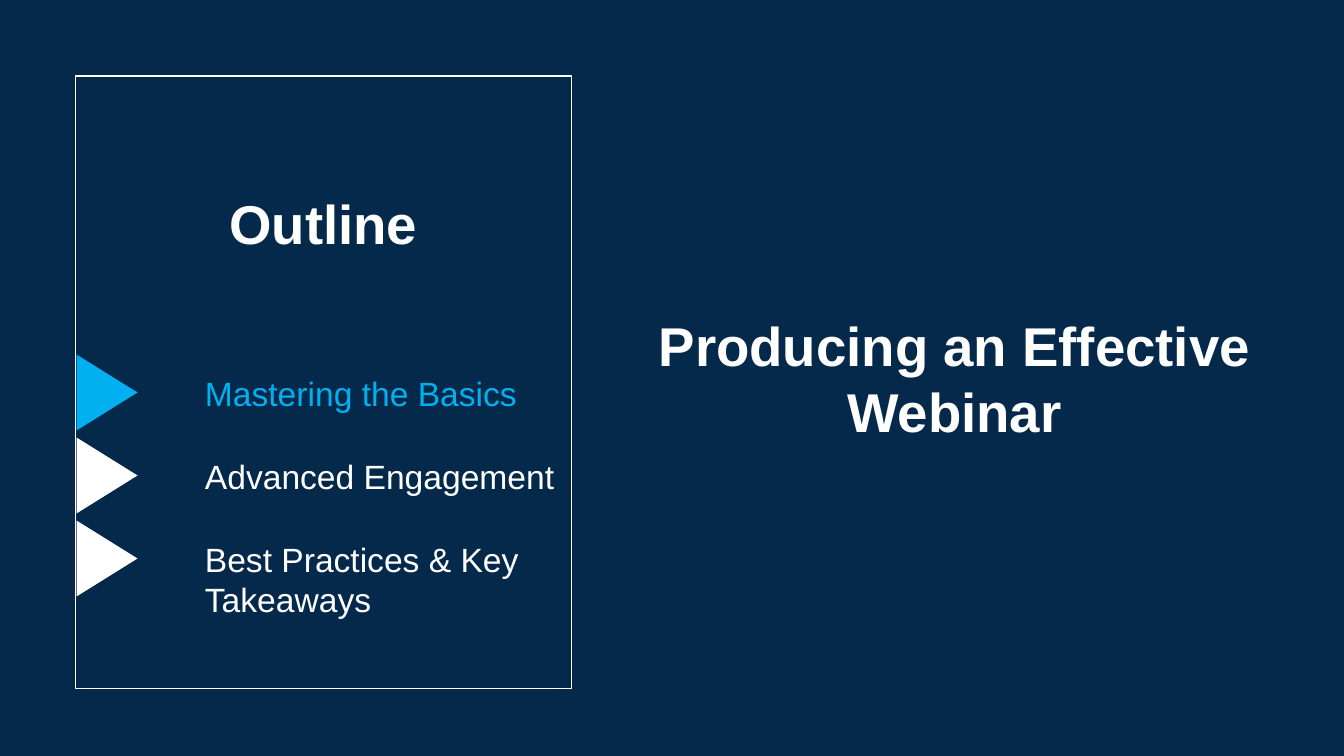
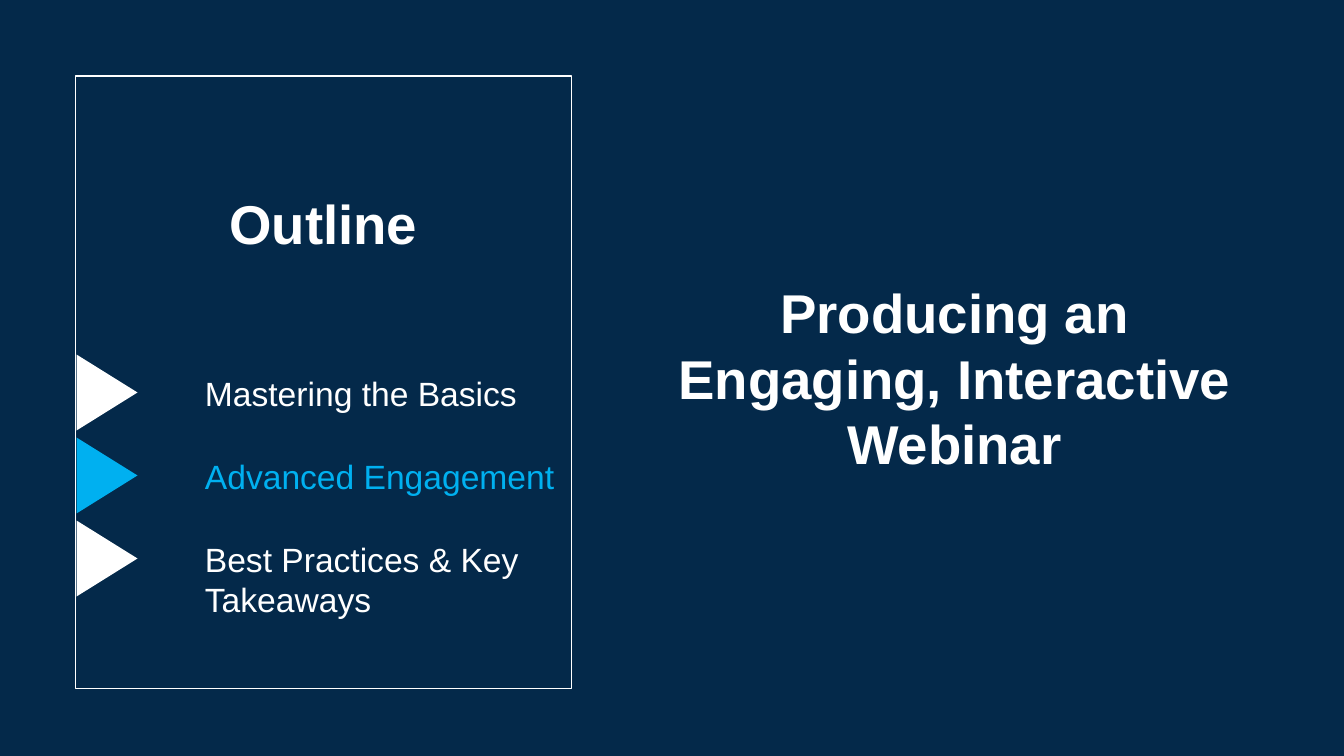
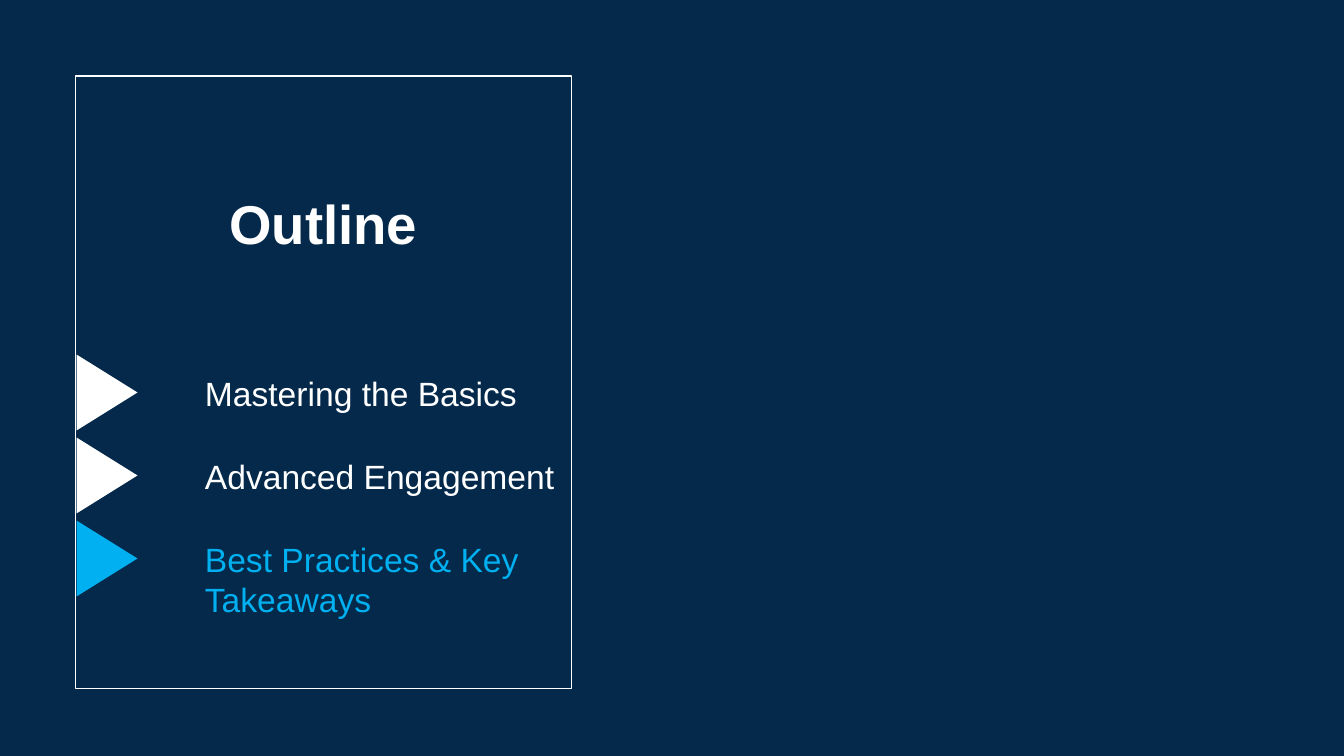
from dataclasses import dataclass

from pptx import Presentation
from pptx import util as u
from pptx.dml.color import RGBColor
from pptx.enum import shapes, text

EMU_PER_PX = 914400 / 100.8
COLORS = {"background": "04294A", "text": "FFFFFF", "accent": "00B0F0"}
FONT = "Arial"

# Outline entries sit on an even vertical rhythm
ENTRY_TOP, ENTRY_STEP = 362, 83
ENTRY_TEXT_DROP = 6


@dataclass(frozen=True)
class Box:
    left: int
    top: int
    width: int
    height: int

    def emu(self):
        return [px(v) for v in (self.left, self.top, self.width, self.height)]


@dataclass(frozen=True)
class Entry:
    label: str
    width: int
    height: int


@dataclass(frozen=True)
class Section:
    active: int
    heading: str = ""


FRAME = Box(76, 76, 496, 613)
OUTLINE_TITLE = Box(94, 76, 459, 293)
HEADING = Box(633, 231, 643, 293)

ENTRIES = [
    Entry("Mastering the Basics", 336, 50),
    Entry("Advanced Engagement", 373, 50),
    Entry("Best Practices & Key\nTakeaways", 337, 92),
]
SECTIONS = [
    Section(0, "Producing an Effective Webinar"),
    Section(1, "Producing an Engaging, Interactive Webinar"),
    Section(2),
]


def px(value: int) -> u.Emu:
    return u.Emu(round(value * EMU_PER_PX))


def rgb(name: str) -> RGBColor:
    return RGBColor.from_string(COLORS[name])


def write(paragraph, words: str, size: int, color: str, bold: bool = False) -> None:
    paragraph.text = words
    for run in paragraph.runs:
        run.font.name = FONT
        run.font.size = u.Pt(size)
        run.font.bold = bold
        run.font.color.rgb = rgb(color)


def add_title(parent, box: Box, words: str) -> None:
    frame = parent.add_textbox(*box.emu()).text_frame
    frame.word_wrap = True
    frame.vertical_anchor = text.MSO_ANCHOR.MIDDLE
    frame.margin_left = frame.margin_right = px(20)
    frame.margin_top = frame.margin_bottom = px(10)
    paragraph = frame.paragraphs[0]
    write(paragraph, words, 39, "text", bold=True)
    paragraph.alignment = text.PP_ALIGN.CENTER


def add_entry(parent, entry: Entry, top: int, color: str) -> None:
    # Marker pointing right from the frame's left edge
    marker = parent.add_shape(
        shapes.MSO_SHAPE.FLOWCHART_EXTRACT, *Box(69, top, 76, 61).emu())
    marker.rotation = 90
    marker.shadow.inherit = False
    marker.fill.solid()
    marker.fill.fore_color.rgb = rgb(color)
    marker.line.fill.background()

    # Label
    box = Box(195, top + ENTRY_TEXT_DROP, entry.width, entry.height)
    frame = parent.add_textbox(*box.emu()).text_frame
    frame.word_wrap = False
    frame.auto_size = text.MSO_AUTO_SIZE.SHAPE_TO_FIT_TEXT
    paragraph = frame.paragraphs[0]
    write(paragraph, entry.label, 24, color)
    paragraph.space_after = u.Pt(24)


def add_outline(slide, active: int) -> None:
    group = slide.shapes.add_group_shape().shapes
    add_title(group, OUTLINE_TITLE, "Outline")
    for index, entry in enumerate(ENTRIES):
        color = "accent" if index == active else "text"
        add_entry(group, entry, ENTRY_TOP + index * ENTRY_STEP, color)

    # Thin frame around the outline
    border = group.add_shape(shapes.MSO_SHAPE.RECTANGLE, *FRAME.emu())
    border.shadow.inherit = False
    border.fill.background()
    border.line.color.rgb = rgb("text")
    border.line.width = u.Pt(0.75)


def main() -> None:
    presentation = Presentation()
    presentation.slide_width, presentation.slide_height = px(1344), px(756)

    # Shared background
    background = presentation.slide_master.background.fill
    background.solid()
    background.fore_color.rgb = rgb("background")

    for section in SECTIONS:
        slide = presentation.slides.add_slide(presentation.slide_layouts[6])
        add_outline(slide, section.active)
        if section.heading:
            add_title(slide.shapes, HEADING, section.heading)

    presentation.save("out.pptx")


if __name__ == "__main__":
    main()
